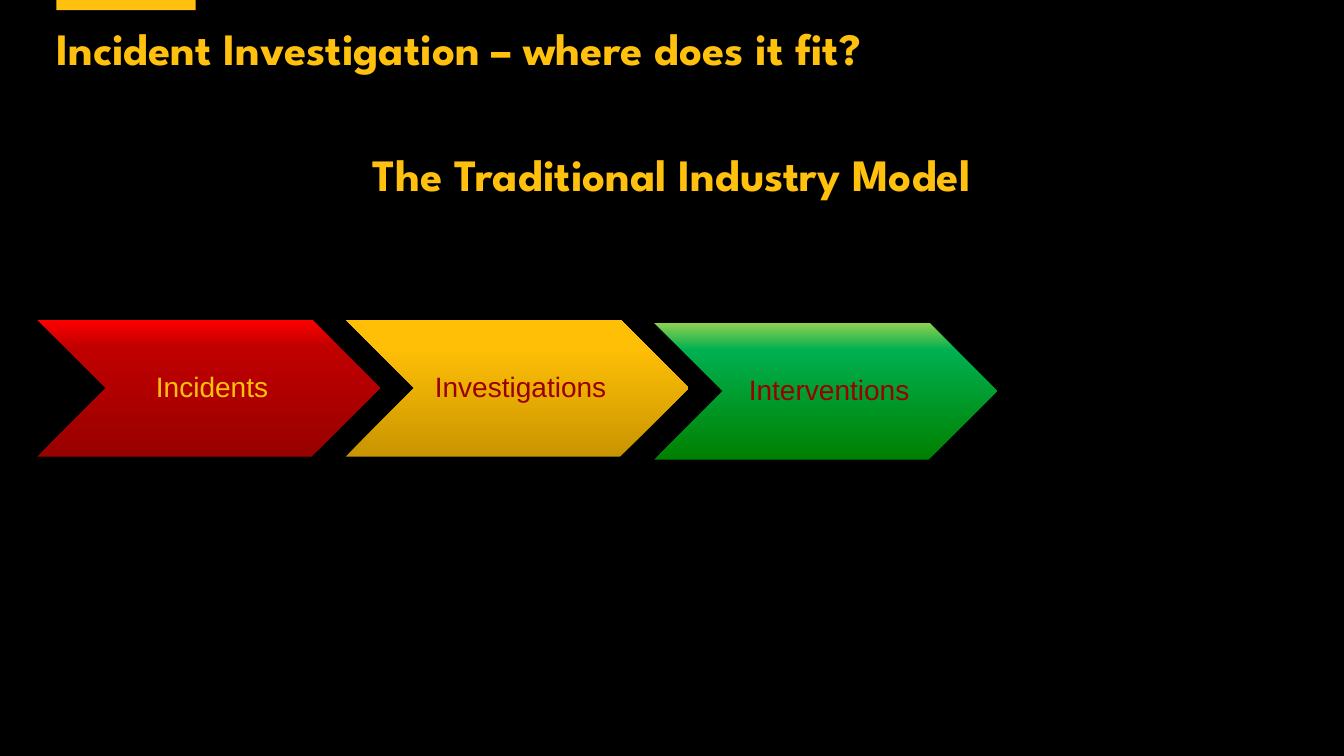
from copy import deepcopy

from pptx import Presentation
from pptx.dml.color import RGBColor
from pptx.enum.shapes import MSO_SHAPE
from pptx.enum.text import MSO_ANCHOR, PP_ALIGN
from pptx.oxml.ns import qn
from pptx.util import Inches, Pt

COLORS = {
    "background": "000000",
    "gold": "FFC10E",
    "dark red": "990000",
    "red": "C00000",
    "bright red": "FF0000",
    "ochre": "C99500",
    "amber": "FFBF06",
    "bright amber": "FFBF07",
    "dark green": "008000",
    "green": "00B050",
    "light green": "92D050",
}
WIDTH, HEIGHT = 13.33, 7.5
STOP_POSITIONS = (0, 0.8, 1)

# Label, text colour, gradient from bottom to top, top edge in inches
STAGES = (
    ("Incidents", "gold", ("dark red", "red", "bright red"), 3.17),
    ("Investigations", "dark red", ("ochre", "amber", "bright amber"), 3.17),
    ("Interventions", "dark red", ("dark green", "green", "light green"), 3.2),
)
STAGE_LEFT, STAGE_STEP = 0.37, 3.06
STAGE_WIDTH, STAGE_HEIGHT = 3.4, 1.36


def color(name):
    return RGBColor.from_string(COLORS[name])


class SlideBuilder:
    """Holds the fonts and the slide; boxes are shares of the slide's size."""

    heading_font = "League Spartan"
    label_font = "Arial"

    def __init__(self, presentation):
        self.width = presentation.slide_width
        self.height = presentation.slide_height
        self.slide = presentation.slides.add_slide(presentation.slide_layouts[6])
        background = self.slide.background.fill
        background.solid()
        background.fore_color.rgb = color("background")

    def place(self, left, top, width, height):
        return (round(left * self.width), round(top * self.height),
                round(width * self.width), round(height * self.height))

    def add_text(self, shape, text, font_name, size, color_name, align, anchor,
                 margins=(0, 0, 0, 0), bold=False):
        frame = shape.text_frame
        frame.word_wrap = True
        frame.vertical_anchor = anchor
        (frame.margin_left, frame.margin_top,
         frame.margin_right, frame.margin_bottom) = map(Inches, margins)
        paragraph = frame.paragraphs[0]
        paragraph.alignment = align
        paragraph.line_spacing = 0.9
        run = paragraph.add_run()
        run.text = text
        run.font.name = font_name
        run.font.size = Pt(size)
        run.font.bold = bold
        run.font.color.rgb = color(color_name)

    def shape(self, kind, box):
        shape = self.slide.shapes.add_shape(kind, *self.place(*box))
        shape.shadow.inherit = False
        shape.line.fill.background()
        return shape

    def bar(self, box, color_name):
        bar = self.shape(MSO_SHAPE.RECTANGLE, box)
        bar.fill.solid()
        bar.fill.fore_color.rgb = color(color_name)

    def heading(self, box, text, align):
        heading = self.slide.shapes.add_textbox(*self.place(*box))
        self.add_text(heading, text, self.heading_font, 32, "gold", align,
                      MSO_ANCHOR.BOTTOM, bold=True)

    def chevron(self, box, label, label_color, gradient):
        chevron = self.shape(MSO_SHAPE.CHEVRON, box)
        chevron.fill.gradient()
        chevron.fill.gradient_angle = 90
        stop_list = next(chevron._element.spPr.iter(qn("a:gsLst")))
        stop_list.append(deepcopy(stop_list[-1]))
        stops = chevron.fill.gradient_stops
        for stop, position, name in zip(stops, STOP_POSITIONS, gradient):
            stop.position = position
            stop.color.rgb = color(name)
        self.add_text(chevron, label, self.label_font, 20, label_color,
                      PP_ALIGN.CENTER, MSO_ANCHOR.MIDDLE, (0.1, 0.03, 0.03, 0.03))


def main():
    presentation = Presentation()
    presentation.slide_width = Inches(WIDTH)
    presentation.slide_height = Inches(HEIGHT)
    builder = SlideBuilder(presentation)

    title_left, heading_height = 0.56 / WIDTH, 0.48 / HEIGHT
    builder.bar((title_left, 0, 1.38 / WIDTH, 0.1 / HEIGHT), "gold")
    builder.heading((title_left, 0.27 / HEIGHT, 12.19 / WIDTH, heading_height),
                    "Incident Investigation – where does it fit?", PP_ALIGN.LEFT)
    for index, (label, label_color, gradient, top) in enumerate(STAGES):
        left = STAGE_LEFT + index * STAGE_STEP
        box = (left / WIDTH, top / HEIGHT,
               STAGE_WIDTH / WIDTH, STAGE_HEIGHT / HEIGHT)
        builder.chevron(box, label, label_color, gradient)
    builder.heading((0, 1.52 / HEIGHT, 1, heading_height),
                    "The Traditional Industry Model", PP_ALIGN.CENTER)

    presentation.save("out.pptx")


if __name__ == "__main__":
    main()
